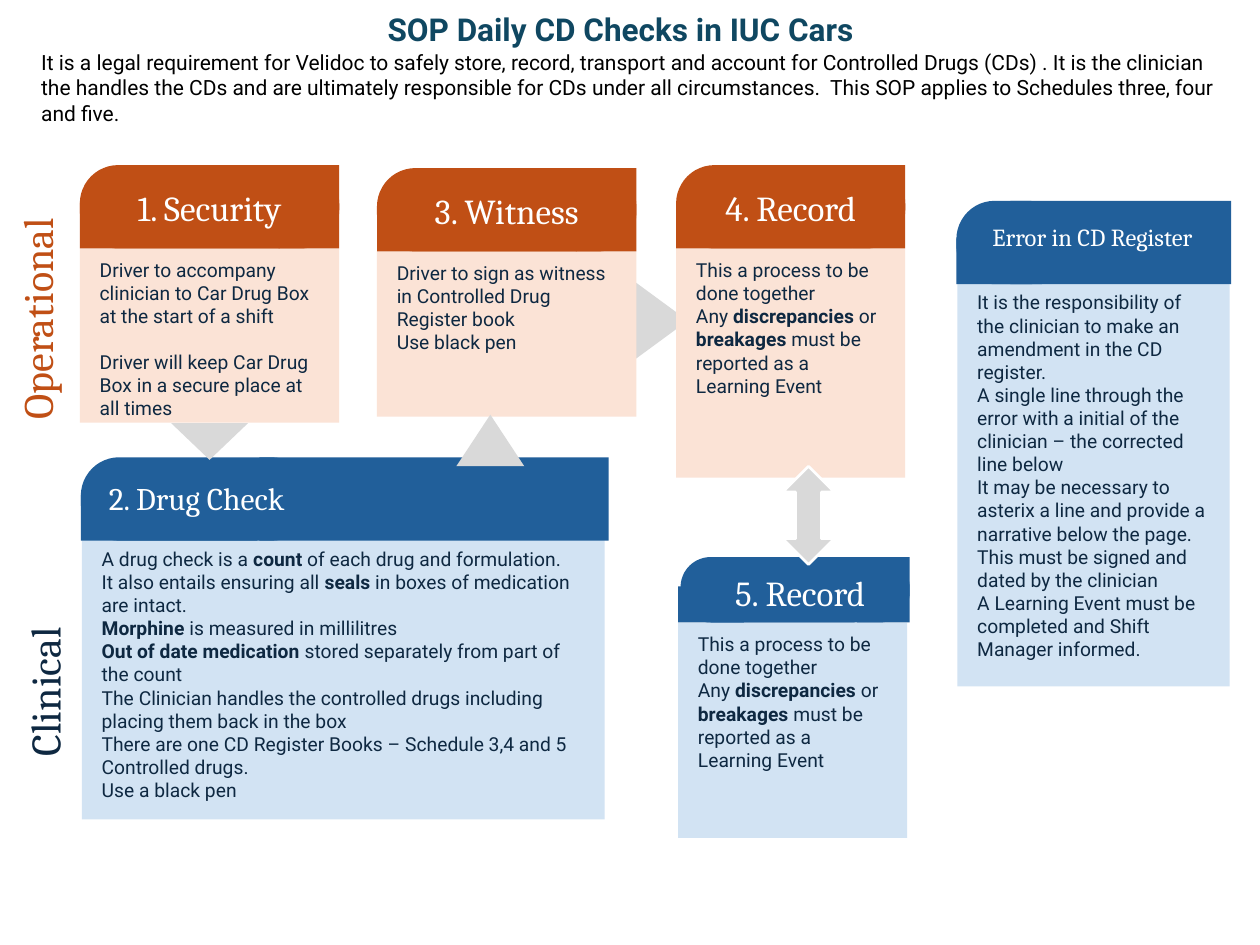
from dataclasses import dataclass

from pptx import Presentation
from pptx.dml.color import RGBColor
from pptx.enum.shapes import MSO_SHAPE as Preset
from pptx.enum.text import MSO_ANCHOR as Anchor, MSO_AUTO_SIZE as AutoSize, PP_ALIGN as Align
from pptx.util import Cm, Pt


@dataclass(frozen=True)
class Theme:
    heading: str = "Cambria"
    body: str = "Roboto"
    white: str = "FFFFFF"
    black: str = "000000"
    navy: str = "0E2841"
    teal: str = "0F4761"
    blue: str = "215F9A"
    pale_blue: str = "D2E3F3"
    orange: str = "C04F15"
    pale_orange: str = "FBE3D6"
    grey: str = "D9D9D9"
    title_size: int = 18
    intro_size: int = 12
    body_size: int = 11
    label_size: int = 24
    step_size: int = 20
    check_size: int = 18
    error_size: int = 14


theme = Theme()
prs = Presentation()
prs.slide_width, prs.slide_height = Cm(25.4), Cm(19.05)
slide = prs.slides.add_slide(prs.slide_layouts[5])


def add_block(preset, box, color):
    block = slide.shapes.add_shape(preset, *map(Cm, box))
    block.shadow.inherit = False
    block.fill.solid()
    block.fill.fore_color.rgb = RGBColor.from_string(color)
    block.line.fill.background()
    return block


def write(shape, paragraphs, font, size, color, align=Align.LEFT, gap=0):
    """Fill a shape with text; **marks** make bold, gap parts the paragraphs."""
    frame = shape.text_frame
    frame.word_wrap = True
    frame.auto_size = AutoSize.NONE
    frame.vertical_anchor = Anchor.TOP
    for number, content in enumerate(paragraphs):
        paragraph = frame.add_paragraph() if number else frame.paragraphs[0]
        paragraph.alignment = align
        if number and gap:
            paragraph.space_before = Pt(gap)
        for part, words in enumerate(content.split("**")):
            if words:
                run = paragraph.add_run()
                run.text = words
                run.font.name, run.font.size = font, Pt(size)
                run.font.bold = part % 2 == 1
                run.font.color.rgb = RGBColor.from_string(color)


# Title and introduction
title = slide.shapes.title
title.left, title.top, title.width, title.height = Cm(1.27), Cm(0.03), Cm(22.48), Cm(1.04)
write(title, ["**SOP Daily CD Checks in IUC Cars**"], theme.body, theme.title_size,
      theme.teal, Align.CENTER)
title_line = title.text_frame.paragraphs[0]
title_line.line_spacing = 1.07
title_line.space_before, title_line.space_after = Pt(8), Pt(4)

intro = slide.shapes.add_textbox(Cm(0.58), Cm(0.88), Cm(24.21), Cm(1.8))
write(intro, [
    "It is a legal requirement for Velidoc to safely store, record, transport and account for "
    "Controlled Drugs (CDs) . It is the clinician the handles the CDs and are ultimately "
    "responsible for CDs under all circumstances.  This SOP applies to Schedules three, four "
    "and five."], theme.body, theme.intro_size, theme.black)

# Row labels
for row, color, left, top, width in [
    ("Clinical", theme.navy, -2.72, 13.31, 7.21),
    ("Operational", theme.orange, -2.54, 5.79, 6.55),
]:
    label = slide.shapes.add_textbox(Cm(left), Cm(top), Cm(width), Cm(1.27))
    label.rotation = 270
    write(label, [row], theme.heading, theme.label_size, color, Align.CENTER)

# Arrow from Witness to Record, partly behind both cards
to_record = add_block(Preset.ISOSCELES_TRIANGLE, (12.52, 5.92, 1.6, 1.09), theme.grey)
to_record.rotation = 90

# Cards: heading, size, colours, header box, rounded width, cap width, heading box, body box,
# paragraph gap, paragraphs
operational = (theme.orange, theme.pale_orange)
clinical = (theme.blue, theme.pale_blue)
record_text = ["This a process to be done together",
               "Any **discrepancies** or **breakages** must be reported as a Learning Event"]
cards = [
    ("2. Drug Check", theme.check_size, clinical, (1.63, 9.22, 10.64, 1.68), 4.62, 7.04,
     (1.63, 9.53, 4.67, 1.02), (1.65, 10.83, 10.54, 5.69), 0, [
         "A drug check is a **count** of each drug and formulation.",
         "It also entails ensuring all **seals** in boxes of medication are intact.",
         "**Morphine** is measured in millilitres",
         "**Out of date medication **stored separately from part of the count",
         "The Clinician handles the controlled drugs including placing them back in the box",
         "There are one CD Register Books – Schedule 3,4 and 5 Controlled drugs.",
         "Use a black pen"]),
    ("5. Record", theme.step_size, clinical, (13.72, 11.23, 4.62, 1.32), 4.62, 1.06,
     (13.82, 11.39, 4.62, 0.89), (13.67, 12.55, 4.62, 4.34), 0, record_text),
    ("1. Security", theme.step_size, operational, (1.61, 3.33, 5.23, 1.68), 5.23, 1.22,
     (1.61, 3.63, 5.23, 1.12), (1.61, 5.01, 5.23, 3.51), 13, [
         "Driver to accompany clinician to Car Drug Box at the start of a shift",
         "Driver will keep Car Drug Box in a secure place at all times"]),
    ("3. Witness", theme.step_size, operational, (7.6, 3.39, 5.23, 1.68), 5.23, 1.22,
     (7.6, 3.69, 5.23, 1.12), (7.6, 5.07, 5.23, 3.33), 0, [
         "Driver to sign as witness in Controlled Drug Register book",
         "Use black pen"]),
    ("4. Record", theme.step_size, operational, (13.63, 3.33, 4.62, 1.68), 4.62, 1.06,
     (13.63, 3.63, 4.62, 1.12), (13.63, 5.01, 4.62, 4.62), 0, record_text),
    ("Error in CD Register", theme.error_size, clinical, (19.28, 4.05, 5.54, 1.68), 2.24, 4.45,
     (19.28, 4.35, 5.49, 0.86), (19.3, 5.66, 5.49, 8.18), 0, [
         "It is the responsibility of the clinician to make an amendment in the CD register.",
         "A single line through the error with a initial of the clinician – the corrected "
         "line below",
         "It may be necessary to asterix a line and provide a narrative below the page.  "
         "This must be signed and dated by the clinician",
         "A Learning Event must be completed and Shift Manager informed."]),
]
for (heading, size, (dark, pale), header, round_width, cap_width, heading_box, body_box,
     gap, paragraphs) in cards:
    body = add_block(Preset.RECTANGLE, body_box, pale)
    frame = body.text_frame
    frame.margin_left = frame.margin_right = Cm(0.4)
    frame.margin_top = frame.margin_bottom = Cm(0.2)
    write(body, paragraphs, theme.body, theme.body_size, theme.navy, gap=gap)

    # The header is rounded at its top left corner only
    left, top, width, height = header
    foot = 0.55 * height
    add_block(Preset.RECTANGLE, (min(left, body_box[0]), top + height - foot,
                                 0.77 * round_width, foot), dark)
    corner = add_block(Preset.ROUNDED_RECTANGLE, (left, top, round_width, height), dark)
    corner.adjustments[0] = 0.46
    add_block(Preset.RECTANGLE, (left + width - cap_width, top, cap_width, height), dark)
    step = slide.shapes.add_textbox(*map(Cm, heading_box))
    write(step, [heading], theme.heading, size, theme.white, Align.CENTER)

# Arrows above the cards
to_check = add_block(Preset.ISOSCELES_TRIANGLE, (3.45, 8.53, 1.55, 0.74), theme.grey)
to_check.rotation = 180
add_block(Preset.ISOSCELES_TRIANGLE, (9.2, 8.36, 1.37, 1.04), theme.grey)
between_records = add_block(Preset.UP_DOWN_ARROW, (15.78, 9.4, 1.04, 1.98), theme.grey)
between_records.line.color.rgb = RGBColor.from_string(theme.white)
between_records.line.width = Pt(1.5)

prs.save("out.pptx")
